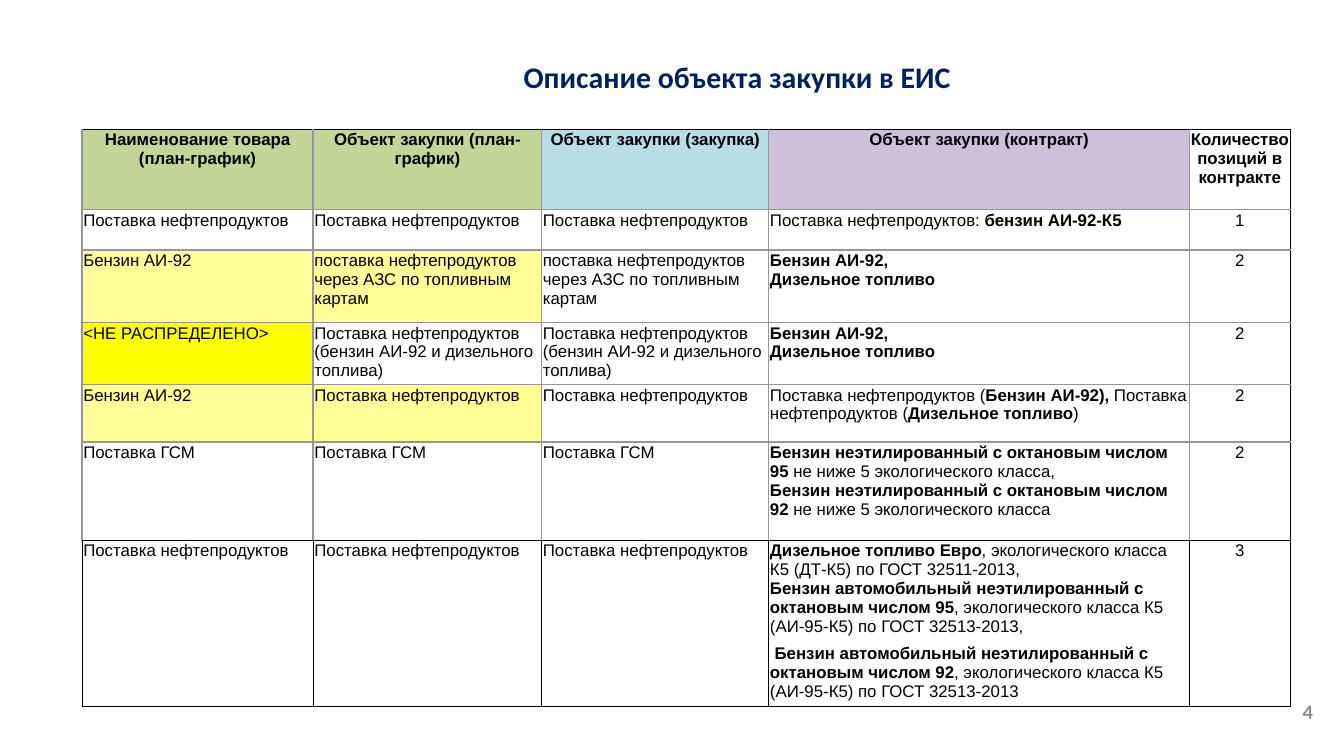
from pptx import Presentation
from pptx.dml.color import RGBColor
from pptx.enum.text import MSO_ANCHOR, MSO_AUTO_SIZE, PP_ALIGN
from pptx.oxml.ns import qn
from pptx.util import Inches, Pt
from lxml.etree import SubElement

GREY, BLACK, NONE = ("969696", 1), ("000000", 0.5), None
WIDTHS = [1.72, 1.7, 1.69, 3.13, 0.75]
HEIGHTS = [0.6, 0.3, 0.54, 0.41, 0.43, 0.73, 0.71, 0.47]
HEADS = ["C2D69A", "C2D69A", "B6DDE8", "CCC0DA", "FFFFFF"]
MARKS = {(2, 0): "FFFF99", (2, 1): "FFFF99", (3, 0): "FFFF00",
         (4, 0): "FFFF99", (4, 1): "FFFF99"}
OIL = "Поставка нефтепродуктов"
CARDS = "поставка нефтепродуктов через АЗС по топливным картам"
MIXED = "Поставка нефтепродуктов (бензин АИ-92 и дизельного топлива)"
FUELS = "*Бензин АИ-92, \nДизельное топливо*"
ROWS = [
    ["*Наименование товара (план-график)*", "*Объект закупки (план-график)*",
     "*Объект закупки (закупка)*", "*Объект закупки (контракт)*",
     "*Количество позиций в контракте*"],
    [OIL, OIL, OIL, OIL + ": *бензин АИ-92-К5*", "1"],
    ["Бензин АИ-92", CARDS, CARDS, FUELS, "2"],
    ["<НЕ РАСПРЕДЕЛЕНО>", MIXED, MIXED, FUELS, "2"],
    ["Бензин АИ-92", OIL, OIL,
     OIL + " (*Бензин АИ-92), *" + OIL + " (*Дизельное топливо*)", "2"],
    ["Поставка ГСМ", "Поставка ГСМ", "Поставка ГСМ",
     "*Бензин неэтилированный с октановым числом 95 *не ниже 5 экологического класса, \n"
     "*Бензин неэтилированный с октановым числом 92 *не ниже 5 экологического класса", "2"],
    [OIL, OIL, OIL,
     "*Дизельное топливо Евро*, экологического класса К5 (ДТ-К5) по ГОСТ 32511-2013, \n"
     "*Бензин автомобильный неэтилированный с октановым числом 95*, "
     "экологического класса К5 (АИ-95-К5) по ГОСТ 32513-2013,", "3"],
    ["", "", "",
     "* Бензин автомобильный неэтилированный с октановым числом 92*, "
     "экологического класса К5 (АИ-95-К5) по ГОСТ 32513-2013", ""],
]


def color(code):
    return RGBColor.from_string(code)


def add_run(para, text, size, face, code, bold):
    run = para.add_run()
    run.text = text
    font = run.font
    font.size, font.name, font.bold = Pt(size), face, bold
    font.color.rgb = color(code)


def add_label(slide, place, text, size, code, align):
    box = slide.shapes.add_textbox(*map(Inches, place))
    frame = box.text_frame
    frame.word_wrap = True
    para = frame.paragraphs[0]
    para.alignment = align
    add_run(para, text, size, "Calibri", code, True)
    return frame


def set_edge(cell, side, edge):
    props = cell._tc.get_or_add_tcPr()
    line = SubElement(props, qn("a:ln" + side))
    if edge is None:
        SubElement(line, qn("a:noFill"))
        return
    code, width = edge
    line.set("w", str(Pt(width)))
    fill = SubElement(line, qn("a:solidFill"))
    SubElement(fill, qn("a:srgbClr")).set("val", code)


def set_edges(cell, row, col):
    low = row >= 6
    set_edge(cell, "L", BLACK if low else GREY)
    set_edge(cell, "R", BLACK if low or col == 4 else GREY)
    set_edge(cell, "T", {0: BLACK, 6: BLACK, 7: NONE}.get(row, GREY))
    set_edge(cell, "B", {5: BLACK, 6: NONE, 7: BLACK}.get(row, GREY))


def fill_text(cell, text, align):
    cell.margin_left = cell.margin_right = cell.margin_top = Inches(0.01)
    cell.margin_bottom = 0
    para = cell.text_frame.paragraphs[0]
    para.alignment = align
    for part, words in enumerate(text.split("*")):
        for place, line in enumerate(words.split("\n")):
            if place:
                para.add_line_break()
            if line:
                add_run(para, line, 9, "Arial", "000000", part % 2 == 1)


def add_grid(slide):
    frame = slide.shapes.add_table(
        len(ROWS), len(WIDTHS), Inches(0.61), Inches(0.96),
        Inches(sum(WIDTHS)), Inches(sum(HEIGHTS)))
    table = frame.table
    table.first_row = table.horz_banding = False
    for col, width in zip(table.columns, WIDTHS):
        col.width = Inches(width)
    for row, height in zip(table.rows, HEIGHTS):
        row.height = Inches(height)
    for row, texts in enumerate(ROWS):
        for col, text in enumerate(texts):
            cell = table.cell(row, col)
            set_edges(cell, row, col)
            cell.fill.solid()
            shade = HEADS[col] if row == 0 else MARKS.get((row, col), "FFFFFF")
            cell.fill.fore_color.rgb = color(shade)
            if text:
                center = row == 0 or col == 4
                fill_text(cell, text, PP_ALIGN.CENTER if center else PP_ALIGN.LEFT)


def main():
    deck = Presentation()
    deck.slide_width = Inches(10)
    deck.slide_height = deck.slide_width * 9 // 16
    slide = deck.slides.add_slide(deck.slide_layouts[6])
    number = add_label(slide, (7.59, 5.14, 2.25, 0.3), "4", 11, "8C8C8C", PP_ALIGN.RIGHT)
    number.vertical_anchor = MSO_ANCHOR.MIDDLE
    number.margin_left = number.margin_right = Inches(0.07)
    number.margin_top = number.margin_bottom = Inches(0.04)
    title = add_label(slide, (2.9, 0.39, 5.17, 0.37), "Описание объекта закупки в ЕИС",
                      16, "002060", PP_ALIGN.CENTER)
    title.auto_size = MSO_AUTO_SIZE.SHAPE_TO_FIT_TEXT
    add_grid(slide)
    deck.save("out.pptx")


if __name__ == "__main__":
    main()
